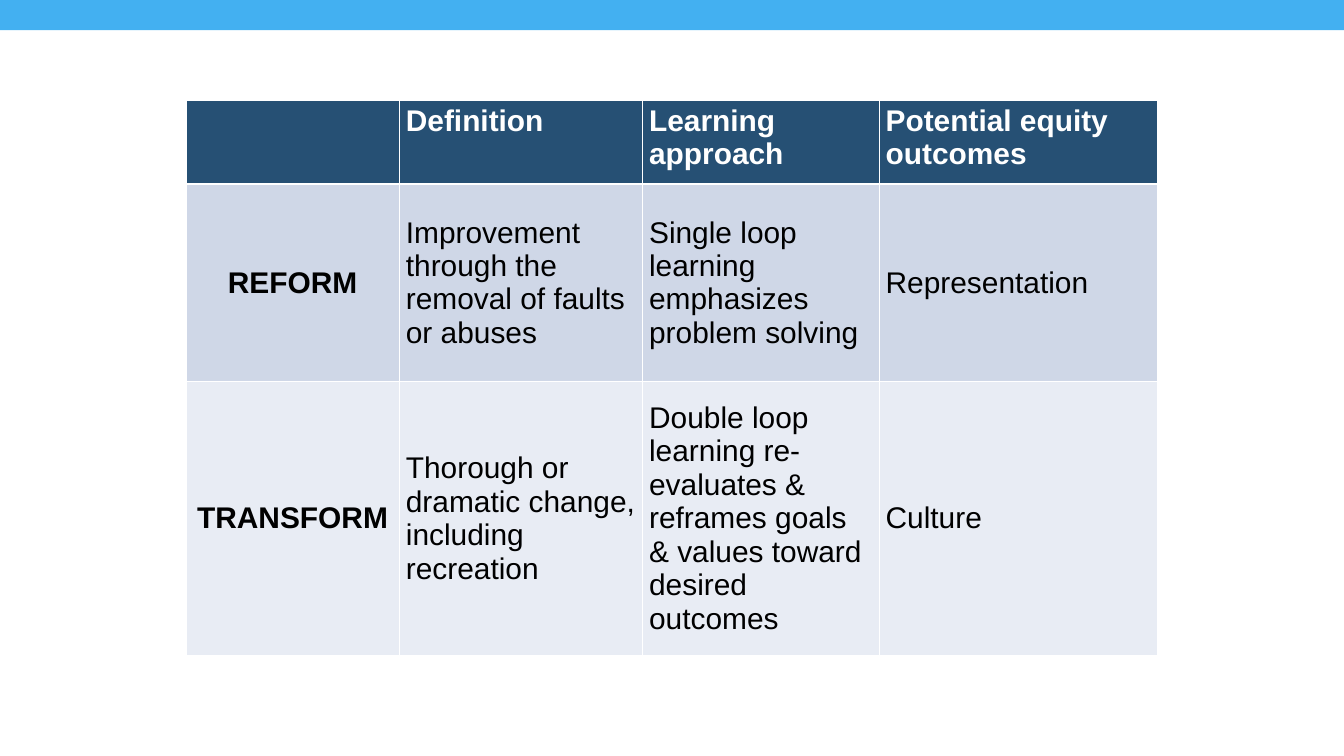
from dataclasses import dataclass

from lxml import etree
from pptx import Presentation
from pptx import util as u
from pptx.dml.color import RGBColor
from pptx.enum import shapes, text
from pptx.oxml.ns import qn


@dataclass(frozen=True)
class Theme:
    font: str = "Arial"
    size: int = 32
    bar: str = "43B0F1"
    header: str = "265074"
    bands: tuple = ("CFD7E7", "E8ECF4")
    white: str = "FFFFFF"
    ink: str = "000000"


def write(tf, content, *, theme, color, bold=False, align=text.PP_ALIGN.LEFT):
    p = tf.paragraphs[0]
    p.alignment = align
    p.font.size = u.Pt(theme.size)
    if content:
        r = p.add_run()
        r.text = content
        r.font.name = theme.font
        r.font.size = u.Pt(theme.size)
        r.font.bold = bold
        r.font.color.rgb = RGBColor.from_string(color)


class Builder:
    def __init__(self, slide, theme):
        self.s = slide
        self.theme = theme

    def bar(self, left, top, width, height):
        sp = self.s.shapes.add_shape(
            shapes.MSO_SHAPE.RECTANGLE,
            *(u.Inches(v) for v in (left, top, width, height)))
        sp.shadow.inherit = False
        sp.fill.solid()
        sp.fill.fore_color.rgb = RGBColor.from_string(self.theme.bar)
        sp.line.fill.background()

    def borders(self, cell, **widths):
        tcPr = cell._tc.get_or_add_tcPr()
        for side, width in widths.items():
            ln = etree.SubElement(tcPr, qn(f"a:ln{side}"), w=str(u.Pt(width)))
            fill = etree.SubElement(ln, qn("a:solidFill"))
            etree.SubElement(fill, qn("a:srgbClr"), val=self.theme.white)

    def cell(self, cell, content, row, col):
        th = self.theme
        header, label = row == 0, col == 0
        # The header is ruled off with a heavier line
        self.borders(cell, L=1, R=1, T=3 if row == 1 else 1, B=3 if header else 1)
        cell.fill.solid()
        cell.fill.fore_color.rgb = RGBColor.from_string(
            th.header if header else th.bands[(row - 1) % 2])
        cell.vertical_anchor = (
            text.MSO_ANCHOR.TOP if header else text.MSO_ANCHOR.MIDDLE)
        write(cell.text_frame, content, theme=th,
              color=th.white if header else th.ink, bold=header or label,
              align=text.PP_ALIGN.CENTER if label and not header
              else text.PP_ALIGN.LEFT)

    def table(self, left, top, widths, heights, rows):
        frame = self.s.shapes.add_table(
            len(heights), len(widths), u.Inches(left), u.Inches(top),
            u.Inches(sum(widths)), u.Inches(sum(heights)))
        table = frame.table
        for column, width in zip(table.columns, widths):
            column.width = u.Inches(width)
        for i, (height, row) in enumerate(zip(heights, rows)):
            table.rows[i].height = u.Inches(height)
            for j, content in enumerate(row):
                self.cell(table.cell(i, j), content, i, j)


ROWS = [
    ("", "Definition", "Learning approach", "Potential equity outcomes"),
    ("REFORM", "Improvement through the removal of faults or abuses",
     "Single loop learning emphasizes problem solving", "Representation"),
    ("TRANSFORM", "Thorough or dramatic change, including recreation",
     "Double loop learning re-evaluates & reframes goals & values toward "
     "desired outcomes", "Culture"),
]


def main():
    prs = Presentation()
    prs.slide_width, prs.slide_height = u.Inches(20), u.Inches(11.25)
    s = prs.slides.add_slide(prs.slide_layouts[6])
    b = Builder(s, Theme())

    # Comparison table
    b.table(2.77, 1.5, (3.17, 3.62, 3.52, 4.15), (1.24, 2.94, 4.07), ROWS)

    # Top band, bleeding over the slide edges
    b.bar(-1.79, -0.8, 23.67, 1.25)

    prs.save("out.pptx")


if __name__ == "__main__":
    main()
